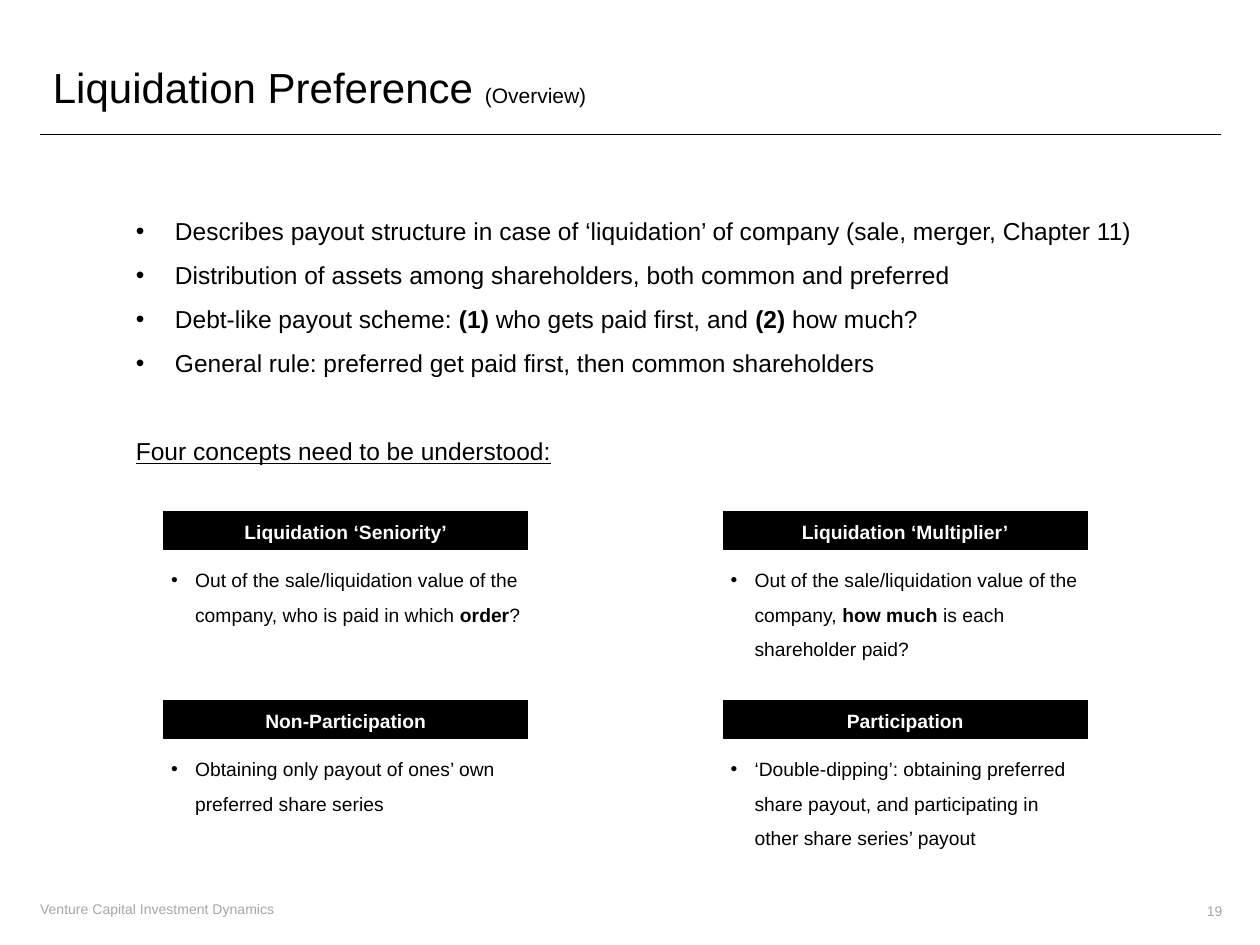
from collections import namedtuple

from lxml import etree
from pptx import Presentation
from pptx.dml.color import RGBColor
from pptx.enum.shapes import MSO_CONNECTOR, MSO_SHAPE
from pptx.enum.text import MSO_ANCHOR, MSO_AUTO_SIZE, PP_ALIGN
from pptx.oxml.ns import qn
from pptx.util import Inches, Pt

LEFT, CENTER, RIGHT = PP_ALIGN.LEFT, PP_ALIGN.CENTER, PP_ALIGN.RIGHT
TOP, MIDDLE = MSO_ANCHOR.TOP, MSO_ANCHOR.MIDDLE
NO_FIT = MSO_AUTO_SIZE.NONE
RECTANGLE, STRAIGHT = MSO_SHAPE.RECTANGLE, MSO_CONNECTOR.STRAIGHT
TITLE_ONLY = 5

Theme = namedtuple("Theme", "font ink paper muted title subtitle body card footer")
THEME = Theme("Arial", RGBColor(0, 0, 0), RGBColor(255, 255, 255),
              RGBColor(0xA6, 0xA6, 0xA6), 24, 12, 14, 11, 8)


class Box(namedtuple("Box", "left top width height")):
    def inside(self, left, top, width, height):
        """Return a box placed relative to this one, in inches."""
        return Box(self.left + left, self.top + top, width, height)

    def emu(self):
        return [Inches(length) for length in self]


SLIDE = Box(0, 0, 10, 7.5)

POINTS = [
    ["Describes payout structure in case of ‘liquidation’ of company (sale, merger, Chapter 11)"],
    ["Distribution of assets among shareholders, both common and preferred"],
    ["Debt-like payout scheme: ", ("(1)", {"bold": True}), " who gets paid first, and ",
     ("(2)", {"bold": True}), " how much?"],
    ["General rule: preferred get paid first, then common shareholders"],
]
CONCEPTS = [
    ("Liquidation ‘Seniority’",
     ["Out of the sale/liquidation value of the company, who is paid in which ",
      ("order", {"bold": True}), "?"]),
    ("Liquidation ‘Multiplier’",
     ["Out of the sale/liquidation value of the company, ",
      ("how much", {"bold": True}), " is each shareholder paid?"]),
    ("Non-Participation",
     ["Obtaining only payout of ones’ own preferred share series"]),
    ("Participation",
     ["‘Double-dipping’: obtaining preferred share payout, and participating in "
      "other share series’ payout"]),
]


def apply(target, values):
    for name, value in values.items():
        setattr(target, name, value)


def write(paragraph, pieces, size, color=THEME.ink, bold=False, **layout):
    """Fill a paragraph; a piece is plain text or text with its own font values."""
    apply(paragraph, layout)
    for piece in pieces:
        text, changes = (piece, {}) if isinstance(piece, str) else piece
        run = paragraph.add_run()
        run.text = text
        apply(run.font, {"name": THEME.font, "size": Pt(size), "bold": bold, **changes})
        run.font.color.rgb = color


def add_bullet(paragraph, indent):
    properties = paragraph._p.get_or_add_pPr()
    properties.set("marL", str(Inches(indent)))
    properties.set("indent", str(-Inches(indent)))
    etree.SubElement(properties, qn("a:buFont"), typeface=THEME.font)
    etree.SubElement(properties, qn("a:buChar"), char="•")


def add_text_frame(slide, box, anchor=TOP):
    frame = slide.shapes.add_textbox(*box.emu()).text_frame
    apply(frame, {"word_wrap": True, "vertical_anchor": anchor})
    return frame


def add_heading(slide, box):
    # Title with its smaller qualifier
    title = slide.shapes.title
    place = box.inside(0, 0, 7.59, 0.7)
    apply(title, dict(zip(("left", "top", "width", "height"), place.emu())))
    apply(title.text_frame, {"vertical_anchor": MIDDLE, "auto_size": NO_FIT, "word_wrap": True})
    write(title.text_frame.paragraphs[0],
          ["Liquidation Preference ", ("(Overview)", {"size": Pt(THEME.subtitle)})],
          THEME.title, alignment=LEFT)
    # Rule under the title
    bottom = Inches(box.top + box.height)
    rule = slide.shapes.add_connector(
        STRAIGHT, Inches(box.left), bottom, Inches(box.left + box.width), bottom)
    rule.line.color.rgb = THEME.ink
    rule.line.width = Pt(0.75)
    etree.SubElement(rule._element.spPr, qn("a:effectLst"))


def add_overview(slide, box):
    frame = add_text_frame(slide, box)
    for index, point in enumerate(POINTS):
        paragraph = frame.add_paragraph() if index else frame.paragraphs[0]
        write(paragraph, point, THEME.body, line_spacing=1.5)
        add_bullet(paragraph, 0.31)
    # Lead-in to the concepts, one line lower
    write(frame.add_paragraph(),
          [("Four concepts need to be understood:", {"underline": True})],
          THEME.body, line_spacing=1.5, space_before=Pt(25))


def add_concept(slide, box, name, explanation):
    # Explanation
    paragraph = add_text_frame(slide, box.inside(-0.04, 0.31, 2.98, 0.9)).paragraphs[0]
    write(paragraph, explanation, THEME.card, line_spacing=1.5)
    add_bullet(paragraph, 0.19)
    # Bar and its label
    bar = slide.shapes.add_shape(RECTANGLE, *box.inside(0, 0, box.width, 0.3).emu())
    bar.shadow.inherit = False
    bar.fill.solid()
    bar.fill.fore_color.rgb = bar.line.color.rgb = THEME.ink
    bar.line.width = Pt(0.5)
    label = add_text_frame(slide, box.inside((box.width - 2.13) / 2, 0.02, 2.13, 0.29))
    write(label.paragraphs[0], [name], THEME.card, THEME.paper, bold=True, alignment=CENTER)


def add_concepts(slide, box, columns=2, column_step=4.44, row_step=1.5):
    for index, (name, explanation) in enumerate(CONCEPTS):
        row, column = divmod(index, columns)
        cell = box.inside(column * column_step, row * row_step, 2.89, 1.2)
        add_concept(slide, cell, name, explanation)


def add_footer(slide, box):
    course = add_text_frame(slide, box.inside(0, 0.07, 2.76, 0.24))
    write(course.paragraphs[0], ["Venture Capital Investment Dynamics"],
          THEME.footer, THEME.muted)
    number = add_text_frame(slide, box.inside(box.width - 0.37, 0, 0.37, 0.4), MIDDLE)
    write(number.paragraphs[0], ["19"], THEME.footer, THEME.muted, alignment=RIGHT)


def main():
    deck = Presentation()
    apply(deck, {"slide_width": Inches(SLIDE.width), "slide_height": Inches(SLIDE.height)})
    slide = deck.slides.add_slide(deck.slide_layouts[TITLE_ONLY])
    add_heading(slide, SLIDE.inside(0.32, 0.34, 9.37, 0.73))
    add_overview(slide, SLIDE.inside(0.98, 1.55, 8.11, 2.18))
    add_concepts(slide, SLIDE.inside(1.3, 4.06, 7.33, 2.7))
    add_footer(slide, SLIDE.inside(0.22, 7.03, 9.58, 0.4))
    deck.save("out.pptx")


if __name__ == "__main__":
    main()
